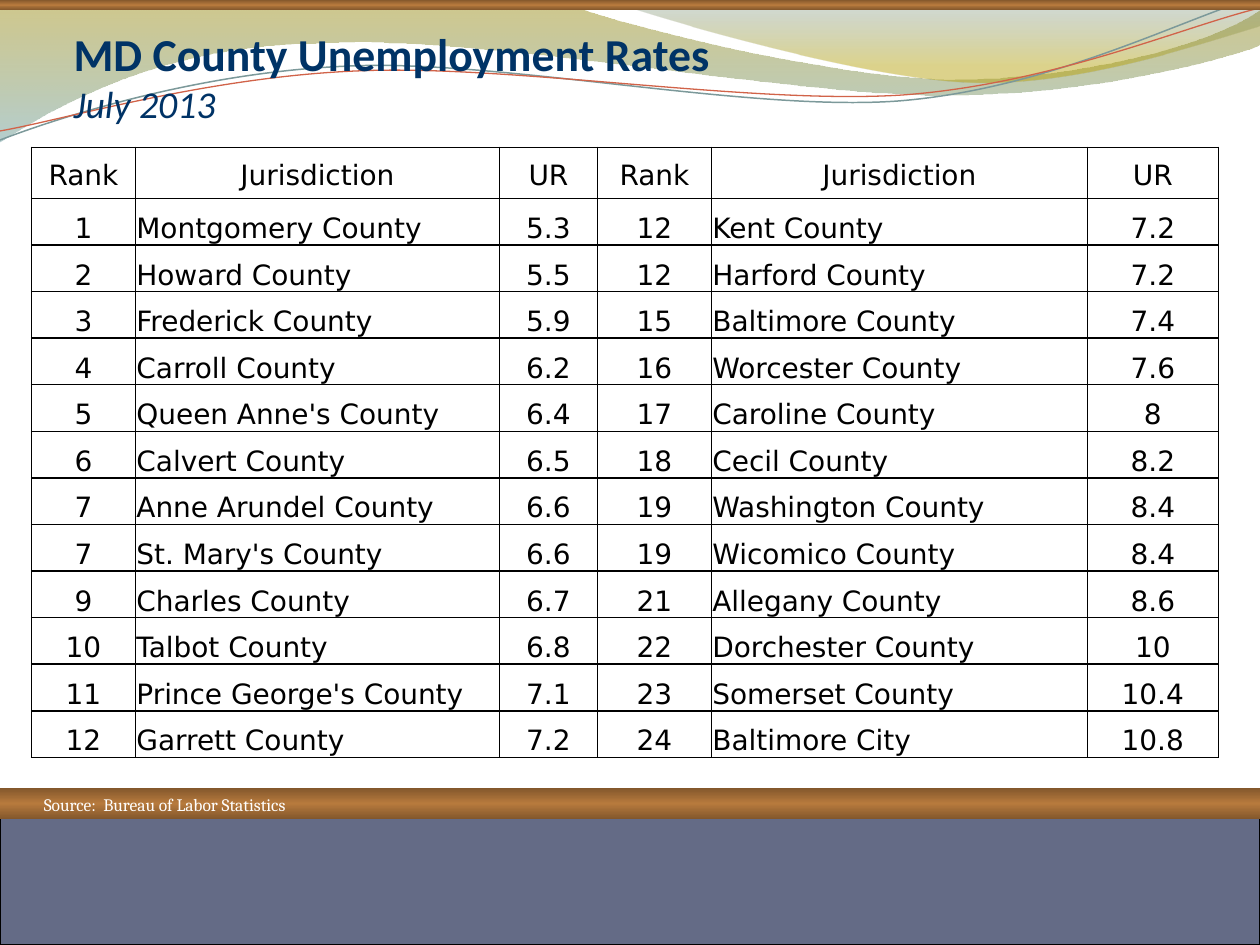
from copy import deepcopy

from pptx import Presentation, util as u
from pptx.dml.color import RGBColor
from pptx.enum import shapes, text
from pptx.oxml import parse_xml
from pptx.oxml.ns import nsdecls, qn

# Content
TITLE, SUBTITLE = "MD County Unemployment Rates", "July 2013"
SOURCE = "Source:  Bureau of Labor Statistics"
HEADERS = ("Rank", "Jurisdiction", "UR")
RATES = [
    ("1", "Montgomery County", "5.3"), ("2", "Howard County", "5.5"),
    ("3", "Frederick County", "5.9"), ("4", "Carroll County", "6.2"),
    ("5", "Queen Anne's County", "6.4"), ("6", "Calvert County", "6.5"),
    ("7", "Anne Arundel County", "6.6"), ("7", "St. Mary's County", "6.6"),
    ("9", "Charles County", "6.7"), ("10", "Talbot County", "6.8"),
    ("11", "Prince George's County", "7.1"), ("12", "Garrett County", "7.2"),
    ("12", "Kent County", "7.2"), ("12", "Harford County", "7.2"),
    ("15", "Baltimore County", "7.4"), ("16", "Worcester County", "7.6"),
    ("17", "Caroline County", "8"), ("18", "Cecil County", "8.2"),
    ("19", "Washington County", "8.4"), ("19", "Wicomico County", "8.4"),
    ("21", "Allegany County", "8.6"), ("22", "Dorchester County", "10"),
    ("23", "Somerset County", "10.4"), ("24", "Baltimore City", "10.8"),
]

# Look: gradient stops are (position %, colour, opacity %)
COLORS = {"navy": "003366", "white": "FFFFFF", "black": "000000", "slate": "646B86",
          "teal": "7C999A", "red": "D16349", "bronze": "83572C", "copper": "B77A3D",
          "olive": "978500", "mist": "77A5A6", "sage": "648484", "gold": "B49F00"}
BRONZE_BAND = [(0, "bronze", 100), (50, "copper", 100), (100, "bronze", 100)]

# Waves: a pair is a straight step, a six-number tuple is a Bezier curve
WAVES = [
    {"start": (0, -1), "gradient": [(0, "olive", 45), (100, "mist", 55)],
     "steps": [(554, -1), (600, 21, 837, 79, 955, 79), (1075, 79, 1207, 47, 1260, 11),
               (1261, 45), (1239, 55, 1096, 96, 940, 95), (784, 95, 481, 35, 324, 43),
               (163, 44, 58, 105, -1, 142)]},
    {"start": (604, -1), "gradient": [(0, "sage", 30), (80, "gold", 45)],
     "steps": [(641, 14, 859, 78, 969, 82), (1079, 87, 1211, 40, 1260, 26), (1260, 0)]},
    {"start": (0, 140), "line": ("teal", 0.85),
     "steps": [(60, 117, 199, 72, 349, 66), (498, 59, 747, 112, 898, 101),
               (1050, 89, 1182, 19, 1257, -3)]},
    {"start": (0, 131), "line": ("red", 0.75),
     "steps": [(59, 121, 207, 77, 357, 71), (508, 64, 752, 105, 903, 95),
               (1053, 84, 1185, 26, 1260, 8)]},
]
COLUMN_WIDTHS = (104, 364, 98, 114, 376, 131)
TABLE_LEFT, TABLE_TOP = 31.5, 147.4
HEADER_HEIGHT, ROW_HEIGHT = 51, 46.6
SCALE = 914400 / 126


def px(value):
    return u.Emu(round(value * SCALE))


def color(name):
    return RGBColor.from_string(COLORS[name])


def add_text(paragraph, words, size, font, fill, bold=False, italic=False):
    run = paragraph.add_run()
    run.text = words
    run.font.size, run.font.name = u.Pt(size), font
    run.font.bold, run.font.italic = bold, italic
    run.font.color.rgb = color(fill)
    return run


def gradient_stop(position, name, opacity):
    alpha = f'<a:alpha val="{opacity * 1000}"/>' if opacity < 100 else ""
    return (f'<a:gs pos="{position * 1000}"><a:srgbClr val="{COLORS[name]}">'
            f'{alpha}</a:srgbClr></a:gs>')


def style(shape, fill=None, gradient=None, line=None):
    shape.shadow.inherit = False
    if fill:
        shape.fill.solid()
        shape.fill.fore_color.rgb = color(fill)
    elif gradient:
        shape.fill.gradient()
        stops = "".join(gradient_stop(*stop) for stop in gradient)
        properties = shape.element.spPr
        properties.replace(properties.find(qn("a:gradFill")), parse_xml(
            f'<a:gradFill {nsdecls("a")} rotWithShape="1"><a:gsLst>{stops}</a:gsLst>'
            '<a:lin ang="5400000" scaled="0"/></a:gradFill>'))
    else:
        shape.fill.background()
    if line:
        shape.line.color.rgb, shape.line.width = color(line[0]), u.Pt(line[1])
    else:
        shape.line.fill.background()


def add_wave(slide, start, steps, **look):
    ends = [step[-2:] for step in steps]
    builder = slide.shapes.build_freeform(*start, scale=SCALE)
    builder.add_line_segments(ends, close="gradient" in look)
    wave = builder.convert_to_shape()
    # Turn straight segments into curves where a step has control points
    left, top = (min(axis) for axis in zip(start, *ends))
    segments = list(wave.element.iter(qn("a:lnTo")))
    for segment, step in zip(segments, steps):
        if len(step) == 6:
            points = "".join(f'<a:pt x="{x - left}" y="{y - top}"/>'
                             for x, y in zip(step[::2], step[1::2]))
            segment.getparent().replace(segment, parse_xml(
                f'<a:cubicBezTo {nsdecls("a")}>{points}</a:cubicBezTo>'))
    style(wave, **look)


def add_band(slide, top, height, **look):
    band = slide.shapes.add_shape(shapes.MSO_SHAPE.RECTANGLE, 0, px(top), px(1260), px(height))
    style(band, **look)


def set_borders(cell):
    properties = cell._tc.get_or_add_tcPr()
    for index, side in enumerate("LRTB"):
        properties.insert(index, parse_xml(
            f'<a:ln{side} {nsdecls("a")} w="12700"><a:solidFill>'
            f'<a:srgbClr val="{COLORS["black"]}"/></a:solidFill></a:ln{side}>'))


def add_rate_table(slide):
    half = len(RATES) // 2
    rows = [HEADERS * 2] + [left + right for left, right in zip(RATES[:half], RATES[half:])]
    height = HEADER_HEIGHT + half * ROW_HEIGHT
    table = slide.shapes.add_table(len(rows), len(COLUMN_WIDTHS), px(TABLE_LEFT), px(TABLE_TOP),
                                   px(sum(COLUMN_WIDTHS)), px(height)).table
    table.first_row = table.horz_banding = False
    for column, width in zip(table.columns, COLUMN_WIDTHS):
        column.width = px(width)
    for row_index, row in enumerate(rows):
        is_header = row_index == 0
        table.rows[row_index].height = px(HEADER_HEIGHT if is_header else ROW_HEIGHT)
        for column_index, words in enumerate(row):
            cell = table.cell(row_index, column_index)
            cell.fill.background()
            cell.vertical_anchor = text.MSO_ANCHOR.BOTTOM
            if not is_header:
                cell.margin_left = cell.margin_right = cell.margin_top = px(1)
                cell.margin_bottom = 0
            set_borders(cell)
            paragraph = cell.text_frame.paragraphs[0]
            is_name = column_index % 3 == 1 and not is_header
            paragraph.alignment = text.PP_ALIGN.LEFT if is_name else text.PP_ALIGN.CENTER
            add_text(paragraph, words, 16, "DejaVu Sans", "black")


def add_title(slide):
    title = slide.shapes.title
    title.element.getparent().append(title.element)  # in front of the waves
    title.left, title.top, title.width, title.height = px(73.5), px(32), px(1124), px(94)
    frame = title.text_frame
    frame.auto_size, frame.word_wrap = text.MSO_AUTO_SIZE.NONE, True
    frame.vertical_anchor = text.MSO_ANCHOR.BOTTOM
    frame.margin_left = frame.margin_right = frame.margin_bottom = 0
    frame.margin_top = px(6)
    paragraph = frame.paragraphs[0]
    paragraph.alignment = text.PP_ALIGN.LEFT
    heading = add_text(paragraph, TITLE, 26.1, "Calibri", "navy", bold=True)
    paragraph.add_line_break()
    line_break = paragraph._p.find(qn("a:br"))
    line_break.append(deepcopy(heading._r.rPr))
    add_text(paragraph, SUBTITLE, 21.6, "Calibri", "navy", italic=True)


def add_source(slide):
    frame = slide.shapes.add_textbox(px(31.5), px(788), px(756), px(34)).text_frame
    frame.word_wrap = True
    add_text(frame.paragraphs[0], SOURCE, 10, "Cambria", "white")


def main():
    presentation = Presentation()
    presentation.slide_width, presentation.slide_height = px(1260), px(945)
    slide = presentation.slides.add_slide(presentation.slide_layouts[5])
    # Background waves and bands
    for wave in WAVES:
        add_wave(slide, **wave)
    add_band(slide, 0, 10, gradient=BRONZE_BAND)
    add_band(slide, 809, 136, fill="slate", line=("black", 0.75))
    add_band(slide, 788, 31, gradient=BRONZE_BAND)
    # Text and table
    add_title(slide)
    add_source(slide)
    add_rate_table(slide)
    presentation.save("out.pptx")


if __name__ == "__main__":
    main()
